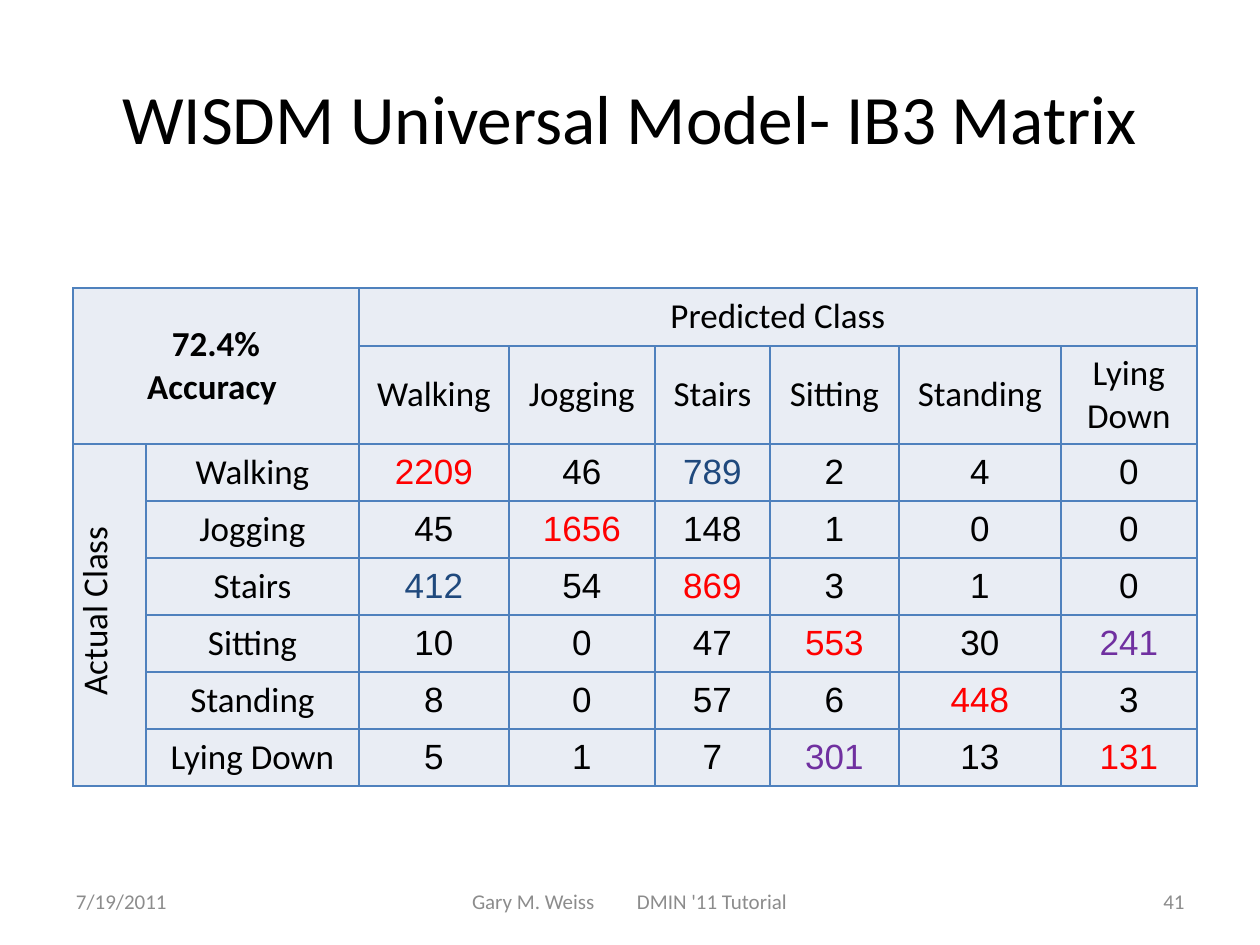
"""Build the confusion matrix slide."""
import dataclasses

import pptx
import pptx.dml.color
import pptx.enum.text
import pptx.oxml.ns
import pptx.util
from lxml import etree

SCALE = 914400 / 126
ALIGN = pptx.enum.text.PP_ALIGN
MIDDLE = pptx.enum.text.MSO_ANCHOR.MIDDLE


@dataclasses.dataclass(frozen=True)
class Theme:
    """Colours, fonts and type sizes of the slide."""
    ink: str = "000000"
    grey: str = "8C8C8C"
    hit: str = "FF0000"
    stairs: str = "1F497D"
    rest: str = "7030A0"
    fill: str = "E9EDF4"
    edge: str = "4F81BD"
    face: str = "Calibri"
    digit: str = "Arial"
    title: float = 39.6
    body: float = 20
    foot: float = 12
    line: float = 1


THEME = Theme()
NAMES = ["Walking", "Jogging", "Stairs", "Sitting", "Standing", "Lying Down"]
COUNTS = [
    [2209, 46, 789, 2, 4, 0],
    [45, 1656, 148, 1, 0, 0],
    [412, 54, 869, 3, 1, 0],
    [10, 0, 47, 553, 30, 241],
    [8, 0, 57, 6, 448, 3],
    [5, 1, 7, 301, 13, 131],
]
MIXED = {frozenset({0, 2}): THEME.stairs, frozenset({3, 5}): THEME.rest}
COLS = [73, 213, 150, 146, 115, 129, 162, 136]
ROWS = [58, 98] + [57] * len(NAMES)


def px(size):
    """Turn pixels into EMU."""
    return pptx.util.Emu(round(size * SCALE))


def rgb(tone):
    """Turn a hex string into a colour."""
    return pptx.dml.color.RGBColor.from_string(tone)


def put(item, **values):
    """Set each given attribute on an item."""
    for name, value in values.items():
        setattr(item, name, value)


def write(frame, text, size, tone=THEME.ink, face=THEME.face,
          align=ALIGN.CENTER, bold=False):
    """Write one formatted paragraph, with a line break at each newline."""
    para = frame.paragraphs[0]
    para.alignment = align
    for index, line in enumerate(text.split("\n")):
        if index:
            para.add_line_break()
        run = para.add_run()
        run.text = line
        put(run.font, name=face, size=pptx.util.Pt(size), bold=bold)
        run.font.color.rgb = rgb(tone)
    return para


def add_title(slide, text):
    """Place and fill the title."""
    title = slide.shapes.title
    put(title, left=px(63), top=px(38), width=px(1134), height=px(157))
    put(title.text_frame, vertical_anchor=MIDDLE, word_wrap=True)
    write(title.text_frame, text, THEME.title)


def add_foot(slide, left, width, text, align, inset=13, stop=None):
    """Add one footer text, with an optional tab stop."""
    box = slide.shapes.add_textbox(px(left), px(876), px(width), px(50))
    frame = box.text_frame
    put(frame, word_wrap=True, vertical_anchor=MIDDLE, margin_left=px(inset))
    para = write(frame, text, THEME.foot, THEME.grey, align=align)
    if stop:
        tabs = etree.SubElement(para._p.get_or_add_pPr(),
                                pptx.oxml.ns.qn("a:tabLst"))
        etree.SubElement(tabs, pptx.oxml.ns.qn("a:tab"),
                         pos=str(px(stop)), algn="l")


def style(cell):
    """Give a cell its borders, fill and anchor."""
    props = cell._tc.get_or_add_tcPr()
    for side in ("lnL", "lnR", "lnT", "lnB"):
        line = etree.SubElement(props, pptx.oxml.ns.qn("a:" + side),
                                w=str(pptx.util.Pt(THEME.line)))
        solid = etree.SubElement(line, pptx.oxml.ns.qn("a:solidFill"))
        etree.SubElement(solid, pptx.oxml.ns.qn("a:srgbClr"), val=THEME.edge)
    cell.fill.solid()
    cell.fill.fore_color.rgb = rgb(THEME.fill)
    cell.vertical_anchor = MIDDLE


def add_grid(slide):
    """Add the empty table with its sizes and merged heads."""
    grid = slide.shapes.add_table(len(ROWS), len(COLS), px(73), px(288),
                                  px(sum(COLS)), px(sum(ROWS))).table
    put(grid, first_row=False, horz_banding=False)
    for col, width in zip(grid.columns, COLS):
        col.width = px(width)
    for row, height in zip(grid.rows, ROWS):
        row.height = px(height)
    for cell in grid.iter_cells():
        style(cell)
    for first, last in (((0, 0), (1, 1)), ((0, 2), (0, 7)), ((2, 0), (7, 0))):
        grid.cell(*first).merge(grid.cell(*last))
    return grid


def fill_heads(grid):
    """Write the heads of the table."""
    write(grid.cell(0, 0).text_frame, "72.4%\nAccuracy ", THEME.body, bold=True)
    write(grid.cell(0, 2).text_frame, "Predicted Class", THEME.body)
    side = grid.cell(2, 0)
    put(side, margin_left=px(1), margin_top=px(1), margin_right=px(1),
        margin_bottom=0)
    side._tc.get_or_add_tcPr().set("vert", "vert270")
    write(side.text_frame, " Actual Class", THEME.body)
    for index, name in enumerate(NAMES, 2):
        write(grid.cell(1, index).text_frame, name.replace(" ", "\n"),
              THEME.body)
        write(grid.cell(index, 1).text_frame, name, THEME.body)


def fill_counts(grid):
    """Write the counts, with hits and mixed pairs in colour."""
    for row, counts in enumerate(COUNTS):
        for col, count in enumerate(counts):
            tone = THEME.hit if row == col else MIXED.get(
                frozenset({row, col}), THEME.ink)
            write(grid.cell(row + 2, col + 2).text_frame, str(count),
                  THEME.body, tone, THEME.digit)


def main():
    """Build and save the slide."""
    deck = pptx.Presentation()
    put(deck, slide_width=px(1260), slide_height=px(945))
    slide = deck.slides.add_slide(deck.slide_layouts[5])
    add_title(slide, "WISDM Universal Model- IB3 Matrix")
    add_foot(slide, 63, 294, "7/19/2011", ALIGN.LEFT)
    add_foot(slide, 431, 399, "Gary M. Weiss\tDMIN '11 Tutorial", ALIGN.LEFT,
             inset=41, stop=165)
    add_foot(slide, 903, 294, "41", ALIGN.RIGHT)
    grid = add_grid(slide)
    fill_heads(grid)
    fill_counts(grid)
    deck.save("out.pptx")


if __name__ == "__main__":
    main()
